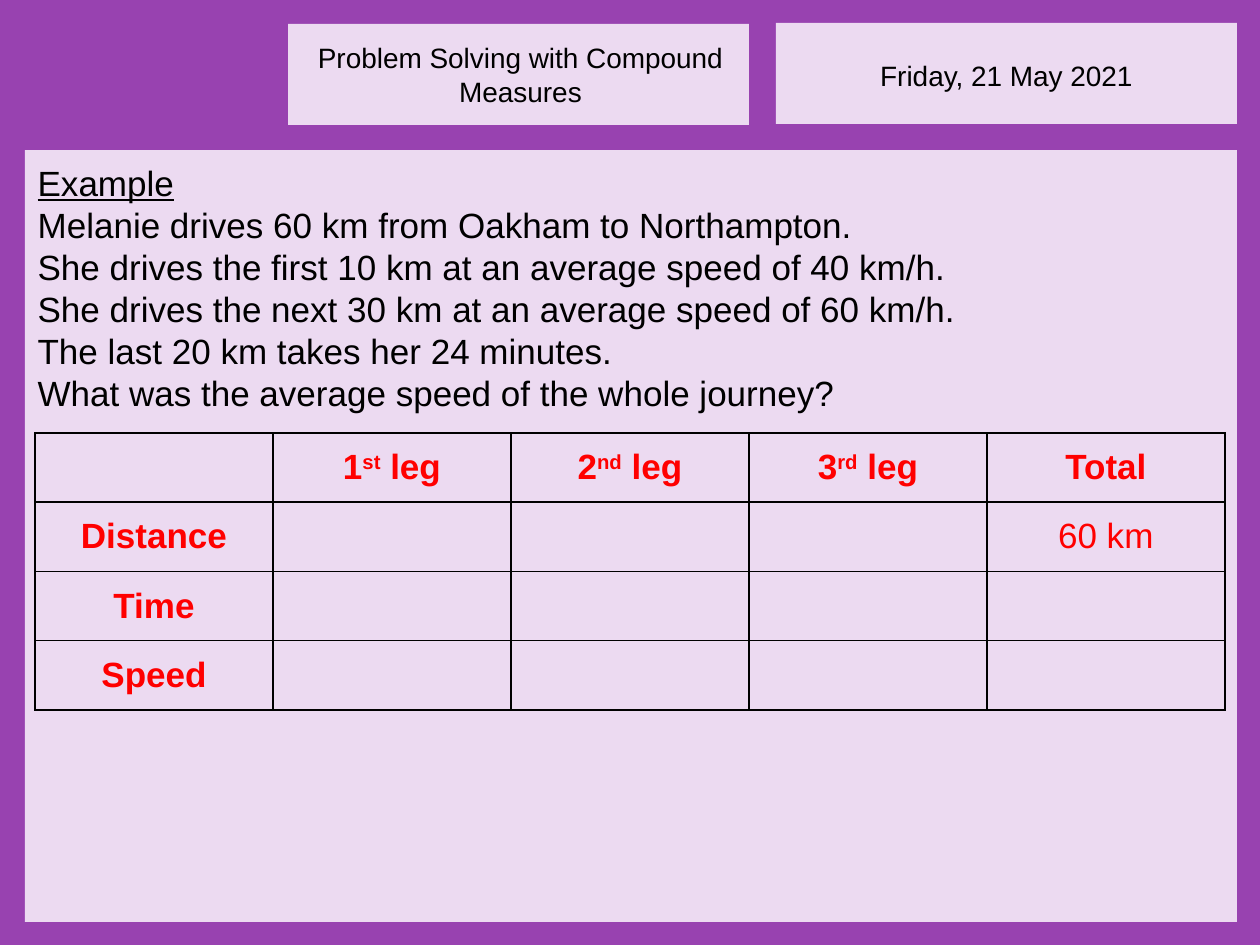
"""Build a maths slide with a worked example and a journey table."""
from dataclasses import dataclass

from lxml import etree
from pptx import Presentation
from pptx.dml.color import RGBColor
from pptx.enum.shapes import MSO_SHAPE
from pptx.enum.text import MSO_ANCHOR, MSO_AUTO_SIZE, PP_ALIGN
from pptx.oxml.ns import qn
from pptx.util import Emu, Pt

RECTANGLE = MSO_SHAPE.RECTANGLE
TOP, MIDDLE = MSO_ANCHOR.TOP, MSO_ANCHOR.MIDDLE
LEFT, CENTER = PP_ALIGN.LEFT, PP_ALIGN.CENTER
NO_AUTOSIZE = MSO_AUTO_SIZE.NONE
EMU_PER_PX = 914400 / 126


@dataclass(frozen=True)
class Theme:
    font: str = "Arial"
    frame: str = "9842B0"
    panel: str = "ECDAF1"
    text: str = "000000"
    answer: str = "FF0000"
    border: str = "000000"
    header_size: int = 16
    body_size: int = 20
    border_width: int = 1


THEME = Theme()
PAGE_SIZE = (1260, 945)
TITLE = "Problem Solving with Compound Measures"
DATE = "Friday, 21 May 2021"
QUESTION = [
    "Example",
    "Melanie drives 60 km from Oakham to Northampton.",
    "She drives the first 10 km at an average speed of 40 km/h.",
    "She drives the next 30 km at an average speed of 60 km/h.",
    "The last 20 km takes her 24 minutes.",
    "What was the average speed of the whole journey?",
]
JOURNEY = [
    [(), ("1", "st", " leg"), ("2", "nd", " leg"), ("3", "rd", " leg"), ("Total",)],
    [("Distance",), (), (), (), ("60 km",)],
    [("Time",), (), (), (), ()],
    [("Speed",), (), (), (), ()],
]
PANELS = [
    ((0, 0, *PAGE_SIZE), THEME.frame),
    ((776, 23, 461, 101), THEME.panel),
    ((288, 24, 461, 101), THEME.panel),
    ((25, 150, 1212, 772), THEME.panel),
]
TITLE_AREA = (290, 34, 461, 81)
DATE_AREA = (776, 52, 461, 47)
QUESTION_AREA = (25, 155, 1211, 606)
TABLE_AREA = (35, 433, 1190, 277)


def px(*lengths):
    return [Emu(round(length * EMU_PER_PX)) for length in lengths]


def style_font(font, size, color, bold=False):
    font.name = THEME.font
    font.size = Pt(size)
    font.bold = bold
    font.color.rgb = RGBColor.from_string(color)


def add_panel(page, area, color):
    panel = page.shapes.add_shape(RECTANGLE, *px(*area))
    panel.shadow.inherit = False
    panel.fill.solid()
    panel.fill.fore_color.rgb = RGBColor.from_string(color)
    panel.line.fill.background()


def write_box(box, area, lines, size, alignment, anchor):
    box.left, box.top, box.width, box.height = px(*area)
    frame = box.text_frame
    frame.text = "\n".join(lines)
    frame.word_wrap = True
    frame.auto_size = NO_AUTOSIZE
    frame.vertical_anchor = anchor
    for para in frame.paragraphs:
        properties = para._p.get_or_add_pPr()
        properties.set("marL", "0")
        properties.set("indent", "0")
        etree.SubElement(properties, qn("a:buNone"))
        para.alignment = alignment
        para.space_before = Pt(0)
        for span in para.runs:
            style_font(span.font, size, THEME.text)


def bring_to_front(box):
    box.element.getparent().append(box.element)


def draw_borders(cell):
    properties = cell._tc.get_or_add_tcPr()
    for position, side in enumerate(("lnL", "lnR", "lnT", "lnB")):
        line = etree.Element(qn(f"a:{side}"), w=str(Pt(THEME.border_width)))
        fill = etree.SubElement(line, qn("a:solidFill"))
        etree.SubElement(fill, qn("a:srgbClr"), val=THEME.border)
        properties.insert(position, line)


def write_cell(cell, parts, bold):
    cell.fill.background()
    cell.vertical_anchor = MIDDLE
    draw_borders(cell)
    para = cell.text_frame.paragraphs[0]
    para.alignment = CENTER
    for index, part in enumerate(parts):
        span = para.add_run()
        span.text = part
        style_font(span.font, THEME.body_size, THEME.answer, bold)
        if index == 1:
            span._r.get_or_add_rPr().set("baseline", "30000")


def add_journey_table(page):
    table = page.shapes.add_table(len(JOURNEY), len(JOURNEY[0]), *px(*TABLE_AREA)).table
    table.horz_banding = False
    for row, cells in enumerate(JOURNEY):
        for column, parts in enumerate(cells):
            write_cell(table.cell(row, column), parts, row == 0 or column == 0)


def main():
    deck = Presentation()
    deck.slide_width, deck.slide_height = px(*PAGE_SIZE)
    page = deck.slides.add_slide(deck.slide_layouts[1])
    title, question = page.shapes.title, page.placeholders[1]
    for area, color in PANELS:
        add_panel(page, area, color)
    date = page.shapes.add_textbox(*px(*DATE_AREA))
    write_box(date, DATE_AREA, [DATE], THEME.header_size, CENTER, MIDDLE)
    write_box(title, TITLE_AREA, [TITLE], THEME.header_size, CENTER, MIDDLE)
    write_box(question, QUESTION_AREA, QUESTION, THEME.body_size, LEFT, TOP)
    question.text_frame.paragraphs[0].runs[0].font.underline = True
    bring_to_front(title)
    bring_to_front(question)
    add_journey_table(page)
    deck.save("out.pptx")


if __name__ == "__main__":
    main()
